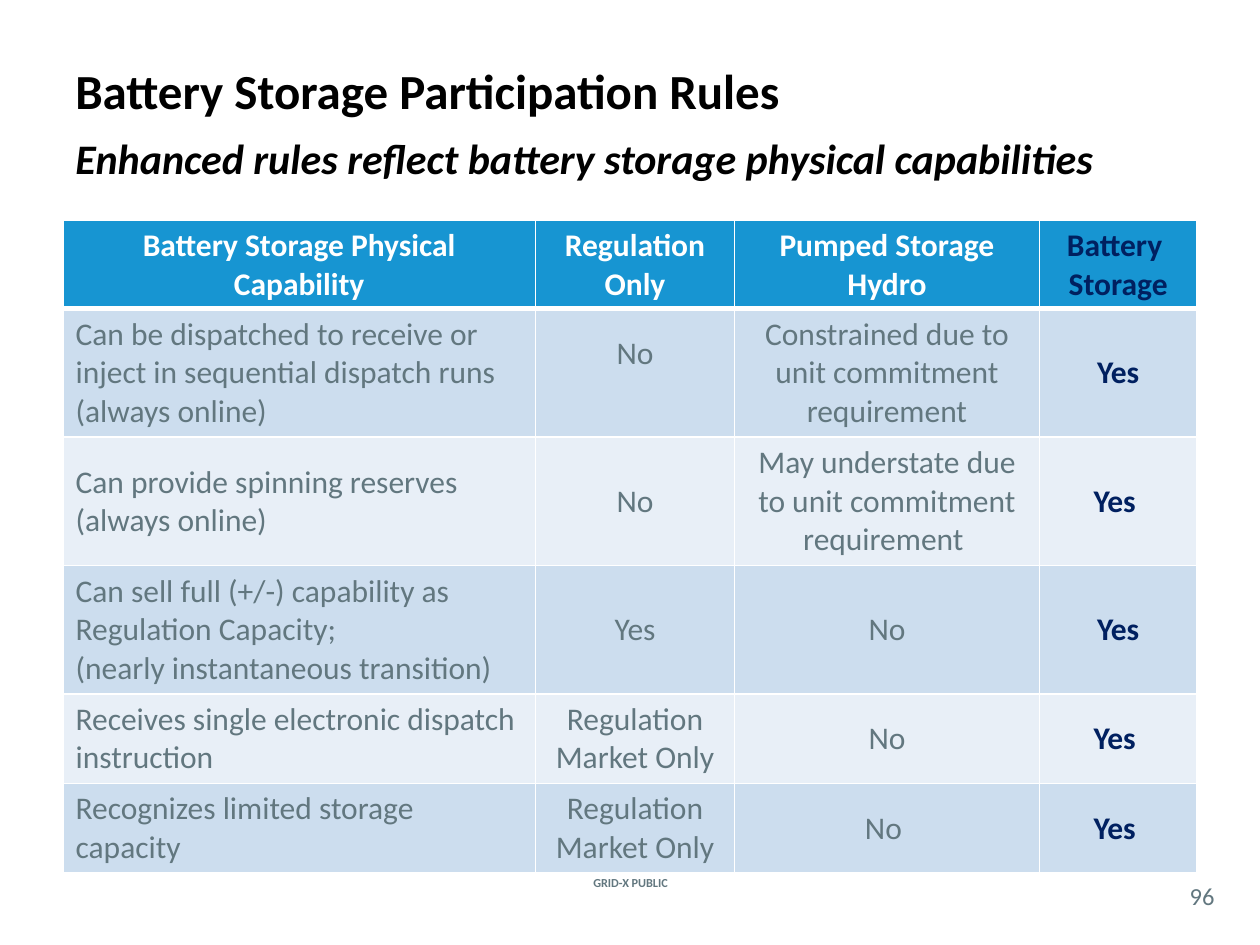
from dataclasses import dataclass

from lxml.etree import SubElement
from pptx import Presentation
from pptx.dml.color import RGBColor
from pptx.enum.text import MSO_ANCHOR, PP_ALIGN
from pptx.oxml.ns import qn
from pptx.util import Inches, Pt

FONT = "Calibri"
BLACK = RGBColor(0x00, 0x00, 0x00)
WHITE = RGBColor(0xFF, 0xFF, 0xFF)
GRAY = RGBColor(0x62, 0x77, 0x7F)
NAVY = RGBColor(0x00, 0x20, 0x60)
HEADER_BLUE = RGBColor(0x17, 0x95, 0xD2)
BAND_DARK = RGBColor(0xCC, 0xDD, 0xEE)
BAND_LIGHT = RGBColor(0xE8, 0xEF, 0xF7)


@dataclass(frozen=True)
class Style:
    size: float
    color: RGBColor
    bold: bool = False
    italic: bool = False
    align: PP_ALIGN = PP_ALIGN.LEFT


@dataclass(frozen=True)
class Label:
    text: str
    left: float
    top: float
    width: float
    height: float
    style: Style
    anchor: MSO_ANCHOR = MSO_ANCHOR.MIDDLE
    inset: bool = True


HEADER = Style(18, WHITE, bold=True, align=PP_ALIGN.CENTER)
HEADER_NAVY = Style(18, NAVY, bold=True, align=PP_ALIGN.CENTER)
CAPABILITY = Style(18, GRAY)
ANSWER = Style(18, GRAY, align=PP_ALIGN.CENTER)

LABELS = [
    Label("GRID-X PUBLIC", 4.27, 6.92, 1.47, 0.17,
          Style(7, GRAY, bold=True, align=PP_ALIGN.CENTER)),
    Label("Battery Storage Participation Rules", 0.5, 0.42, 9, 0.58,
          Style(28, BLACK, bold=True)),
    Label("96", 9.33, 6.96, 0.42, 0.29,
          Style(14, GRAY, align=PP_ALIGN.CENTER), inset=False),
    Label("Enhanced rules reflect battery storage physical capabilities",
          0.5, 1, 9, 0.5, Style(24, BLACK, bold=True, italic=True), MSO_ANCHOR.TOP),
]

# "\n" starts a paragraph, "\v" breaks a line inside one
COLUMN_WIDTHS = [3.75, 1.58, 2.42, 1.25]
ROW_HEIGHTS = [0.7, 1.02, 1.02, 1.02, 0.71, 0.71]
ROWS = [
    ["Battery Storage Physical Capability", "Regulation\nOnly",
     "Pumped Storage Hydro", "Battery \vStorage"],
    ["Can be dispatched to receive or inject in sequential dispatch runs (always online)",
     "No", "Constrained due to unit commitment requirement", "Yes"],
    ["Can provide spinning reserves\n(always online)", "No",
     "May understate due to unit commitment requirement ", "Yes "],
    ["Can sell full (+/-) capability as Regulation Capacity;\n"
     "(nearly instantaneous transition)", "Yes", "No", "Yes"],
    ["Receives single electronic dispatch instruction", "Regulation Market Only",
     "No", "Yes "],
    ["Recognizes limited storage capacity", "Regulation Market Only", "No ", "Yes "],
]


def write_text(frame, text: str, style: Style) -> None:
    for index, line in enumerate(text.split("\n")):
        para = frame.paragraphs[0] if index == 0 else frame.add_paragraph()
        para.alignment = style.align
        for part_index, part in enumerate(line.split("\v")):
            if part_index:
                para.add_line_break()
            span = para.add_run()
            span.text = part
            span.font.name = FONT
            span.font.size = Pt(style.size)
            span.font.bold = style.bold
            span.font.italic = style.italic
            span.font.color.rgb = style.color


def add_label(page, label: Label) -> None:
    box = page.shapes.add_textbox(Inches(label.left), Inches(label.top),
                                  Inches(label.width), Inches(label.height))
    frame = box.text_frame
    frame.word_wrap = True
    frame.vertical_anchor = label.anchor
    if not label.inset:
        frame.margin_left = frame.margin_right = 0
        frame.margin_top = frame.margin_bottom = 0
    write_text(frame, label.text, label.style)


def add_borders(cell, top: float, bottom: float) -> None:
    properties = cell._tc.get_or_add_tcPr()
    for tag, width in (("a:lnL", 1), ("a:lnR", 1), ("a:lnT", top), ("a:lnB", bottom)):
        line = SubElement(properties, qn(tag), w=str(Pt(width)))
        fill = SubElement(line, qn("a:solidFill"))
        SubElement(fill, qn("a:srgbClr"), val=str(WHITE))


def cell_style(row: int, column: int) -> Style:
    if column == 3:
        return HEADER_NAVY
    if row == 0:
        return HEADER
    return CAPABILITY if column == 0 else ANSWER


def row_fill(row: int) -> RGBColor:
    if row == 0:
        return HEADER_BLUE
    return BAND_DARK if row % 2 else BAND_LIGHT


def add_rules_table(page) -> None:
    table = page.shapes.add_table(
        len(ROWS), len(COLUMN_WIDTHS), Inches(0.5), Inches(1.75),
        Inches(sum(COLUMN_WIDTHS)), Inches(sum(ROW_HEIGHTS))).table
    for column, width in zip(table.columns, COLUMN_WIDTHS):
        column.width = Inches(width)
    for row, height in zip(table.rows, ROW_HEIGHTS):
        row.height = Inches(height)
    for row, texts in enumerate(ROWS):
        for column, text in enumerate(texts):
            cell = table.cell(row, column)
            add_borders(cell, top=3 if row == 1 else 1, bottom=3 if row == 0 else 1)
            cell.fill.solid()
            cell.fill.fore_color.rgb = row_fill(row)
            cell.vertical_anchor = MSO_ANCHOR.TOP if row == 0 else MSO_ANCHOR.MIDDLE
            write_text(cell.text_frame, text, cell_style(row, column))
    # The first "No" sits one half line above the middle
    table.cell(1, 1).margin_bottom = Inches(0.35)


def main() -> None:
    deck = Presentation()
    deck.slide_width = Inches(10)
    deck.slide_height = Inches(7.5)
    page = deck.slides.add_slide(deck.slide_layouts[6])

    # Title, subtitle and footer
    for label in LABELS:
        add_label(page, label)

    # Comparison of participation rules
    add_rules_table(page)
    deck.save("out.pptx")


if __name__ == "__main__":
    main()
